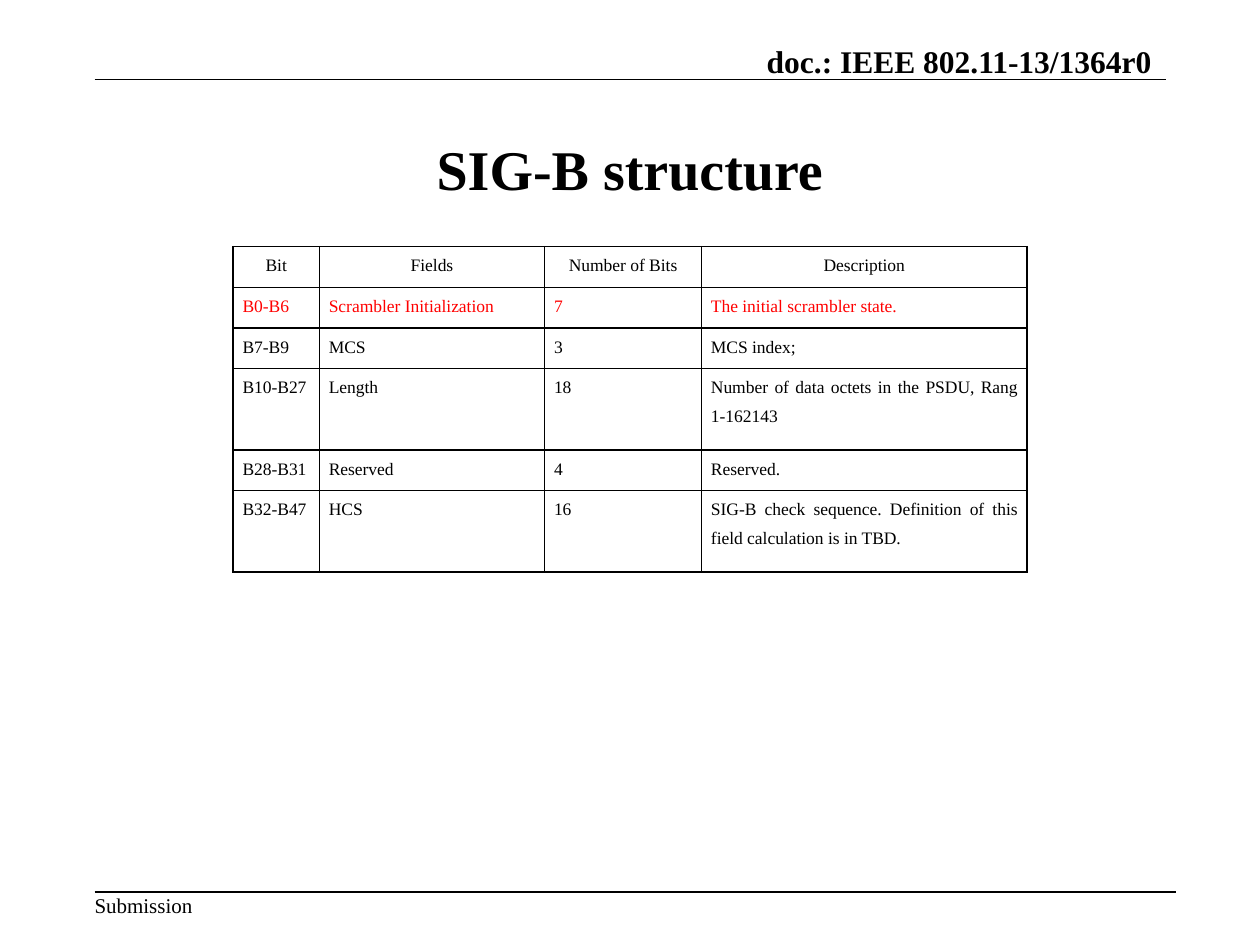
"""Build the SIG-B structure slide with its header, footer and bit table."""
from lxml.etree import SubElement
from pptx import Presentation
from pptx.dml.color import RGBColor as RGB
from pptx.enum.shapes import MSO_CONNECTOR as LINK
from pptx.enum.text import MSO_ANCHOR as ANCHOR, PP_ALIGN as ALIGN
from pptx.oxml import parse_xml
from pptx.oxml.ns import nsdecls, qn
from pptx.util import Pt

COLORS = {"ink": "000000", "new": "FF0000"}
FONT = "Times New Roman"
TITLE = "SIG-B structure"
MARKS = [
    ("doc.: IEEE 802.11-13/1364r0", (399.6, 24, 258.5, 21.6), 18, True,
     ALIGN.RIGHT, ANCHOR.BOTTOM),
    ("Submission", (54, 509.8, 57, 14.4), 12, False, ALIGN.LEFT, ANCHOR.TOP),
]
RULES = [(54, 666, 45.4), (54, 671.8, 509.8)]
ROWS = [
    ("Bit", "Fields", "Number of Bits", "Description"),
    ("B0-B6", "Scrambler Initialization", "7", "The initial scrambler state."),
    ("B7-B9", "MCS", "3", "MCS index;"),
    ("B10-B27", "Length", "18",
     "Number of data octets in the PSDU, Rang 1-162143"),
    ("B28-B31", "Reserved", "4", "Reserved."),
    ("B32-B47", "HCS", "16",
     "SIG-B check sequence. Definition of this field calculation is in TBD."),
]
WIDTHS = [49.3, 128.7, 89.7, 186]
LEFT, TOP, LINE = 133.2, 140.9, 23.25
TALL = (3, 5)
NEW = 1


def write(frame, text, size, bold, align, color="ink"):
    frame.text = text
    para = frame.paragraphs[0]
    para.alignment = align
    font = para.font
    font.name, font.size, font.bold = FONT, Pt(size), bold
    font.color.rgb = RGB.from_string(COLORS[color])
    return para


def add_mark(slide, text, box, size, bold, align, anchor):
    frame = slide.shapes.add_textbox(*map(Pt, box)).text_frame
    frame.margin_left = frame.margin_right = 0
    frame.margin_top = frame.margin_bottom = 0
    frame.word_wrap = True
    frame.vertical_anchor = anchor
    write(frame, text, size, bold, align)


def add_rule(slide, start, end, y):
    rule = slide.shapes.add_connector(
        LINK.STRAIGHT, Pt(start), Pt(y), Pt(end), Pt(y))
    rule.line.color.rgb = RGB.from_string(COLORS["ink"])
    rule.line.width = Pt(1)
    SubElement(rule._element.spPr, qn("a:effectLst"))


def add_borders(cell):
    props = cell._tc.get_or_add_tcPr()
    for spot, side in enumerate("LRTB"):
        props.insert(spot, parse_xml(
            f'<a:ln{side} {nsdecls("a")} w="{Pt(1)}"><a:solidFill>'
            f'<a:srgbClr val="{COLORS["ink"]}"/></a:solidFill></a:ln{side}>'))


def add_grid(slide):
    heights = [LINE * (2 if row in TALL else 1) for row in range(len(ROWS))]
    table = slide.shapes.add_table(
        len(ROWS), len(WIDTHS), Pt(LEFT), Pt(TOP),
        Pt(sum(WIDTHS)), Pt(sum(heights))).table
    table.first_row = table.horz_banding = False
    for col, width in zip(table.columns, WIDTHS):
        col.width = Pt(width)
    for row, height in zip(table.rows, heights):
        row.height = Pt(height)
    for r, texts in enumerate(ROWS):
        align = ALIGN.JUSTIFY if r else ALIGN.CENTER
        color = "new" if r == NEW else "ink"
        for c, text in enumerate(texts):
            cell = table.cell(r, c)
            cell.margin_left = cell.margin_right = Pt(5.4)
            cell.margin_top = cell.margin_bottom = 0
            cell.fill.background()
            add_borders(cell)
            para = write(cell.text_frame, text, 10, False, align, color)
            para.line_spacing = 1.5


def main():
    deck = Presentation()
    deck.slide_width, deck.slide_height = Pt(720), Pt(540)
    slide = deck.slides.add_slide(deck.slide_layouts[5])
    title = slide.shapes.title
    title.left, title.top, title.width, title.height = map(
        Pt, (54, 54, 612, 84))
    title.text_frame.vertical_anchor = ANCHOR.MIDDLE
    write(title.text_frame, TITLE, 32, True, ALIGN.CENTER)
    for mark in MARKS:
        add_mark(slide, *mark)
    for rule in RULES:
        add_rule(slide, *rule)
    add_grid(slide)
    deck.save("out.pptx")


if __name__ == "__main__":
    main()
